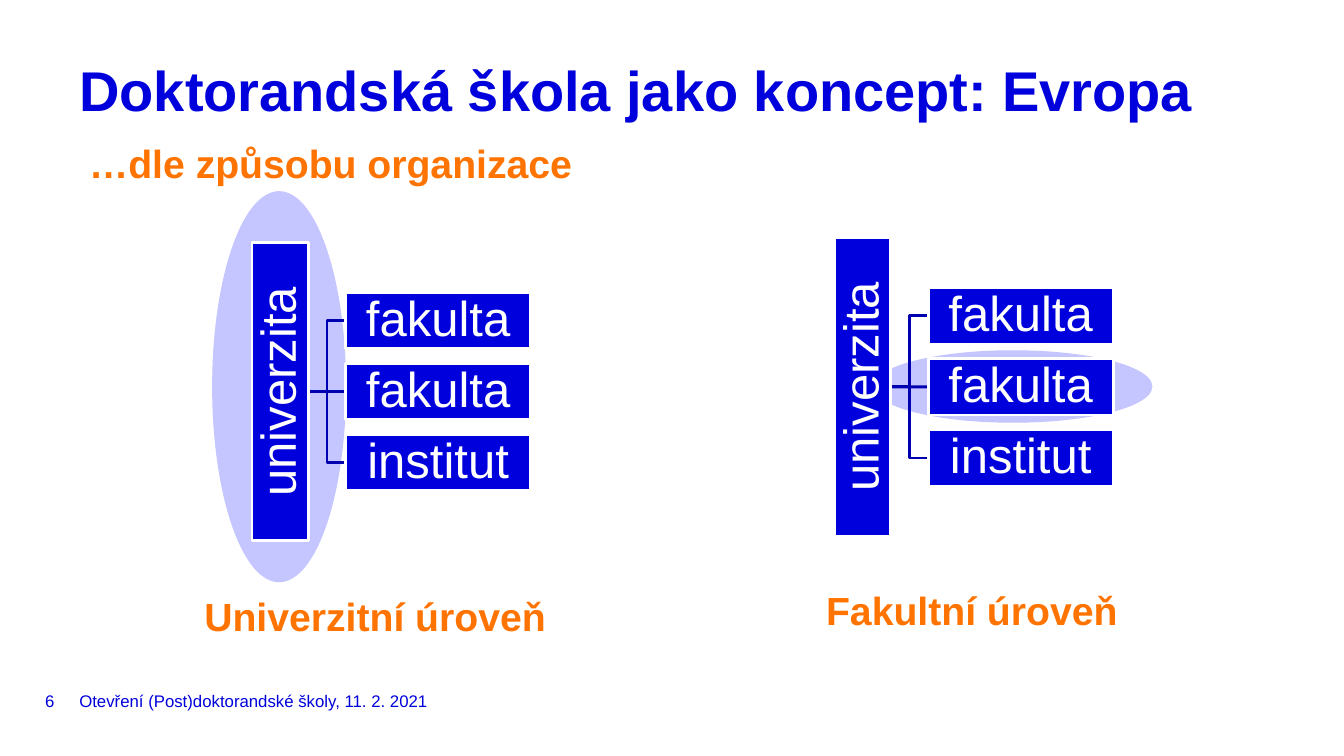
from lxml.etree import SubElement
from pptx import Presentation
from pptx.dml.color import RGBColor
from pptx.enum.shapes import MSO_CONNECTOR as Link, MSO_SHAPE as Shape
from pptx.enum.text import MSO_ANCHOR as Anchor, MSO_AUTO_SIZE as AutoSize, PP_ALIGN as Align
from pptx.oxml.ns import qn
from pptx.util import Cm, Pt

BLUE, DARK_BLUE, LILAC = "0000DC", "0000B0", "C5C5FF"
ORANGE, WHITE = "FF7300", "FFFFFF"
BOX_HEIGHT, UNIT_WIDTH, TRUNK_HEIGHT = 1.42, 4.67, 7.52
GAP, ROW_STEP = 0.94, 1.79
TOP, LEFT, BOTTOM, RIGHT = range(4)


def color(value):
    return RGBColor.from_string(value)


def write(frame, text, size, ink=BLUE, bold=False, align=Align.LEFT,
          anchor=Anchor.TOP, margin=None, wrap=True, fit=AutoSize.NONE, spacing=None):
    frame.word_wrap = wrap
    frame.auto_size = fit
    frame.vertical_anchor = anchor
    if margin is not None:
        frame.margin_left = frame.margin_right = Cm(margin)
        frame.margin_top = frame.margin_bottom = Cm(margin)
    para = frame.paragraphs[0]
    para.alignment = align
    if spacing is not None:
        para.line_spacing = spacing
    span = para.add_run()
    span.text = text
    span.font.name = "Arial"
    span.font.size = Pt(size)
    span.font.bold = bold
    span.font.color.rgb = color(ink)


def add_text(page, area, text, size, **style):
    box = page.shapes.add_textbox(*map(Cm, area))
    write(box.text_frame, text, size, **style)


def add_caption(page, area, text):
    add_text(page, area, text, 28, ink=ORANGE, bold=True,
             wrap=False, fit=AutoSize.SHAPE_TO_FIT_TEXT)


def add_figure(page, kind, area, fill, line, width):
    figure = page.shapes.add_shape(kind, *map(Cm, area))
    figure.shadow.inherit = False
    figure.fill.solid()
    figure.fill.fore_color.rgb = color(fill)
    figure.line.color.rgb = color(line)
    figure.line.width = Pt(width)
    return figure


def add_highlight(page, area):
    add_figure(page, Shape.OVAL, area, LILAC, LILAC, 0.75)


def add_unit(page, area, text):
    box = add_figure(page, Shape.RECTANGLE, area, BLUE, WHITE, 2)
    write(box.text_frame, text, 35, ink=WHITE, align=Align.CENTER,
          anchor=Anchor.MIDDLE, margin=0.04, spacing=0.9)
    return box


def add_link(page, kind):
    link = page.shapes.add_connector(kind, 0, 0, 0, 0)
    link.line.color.rgb = color(DARK_BLUE)
    link.line.width = Pt(2)
    SubElement(link.element.spPr, qn("a:effectLst"))
    return link


def add_hierarchy(page, left, middle, trunk_text, unit_texts):
    """Upright trunk with units to its right, all centred on the height middle."""
    centre = (len(unit_texts) - 1) / 2
    # Links are made first so that they lie behind the boxes they join.
    links = [add_link(page, Link.STRAIGHT if row == centre else Link.ELBOW)
             for row in range(len(unit_texts))]
    trunk = add_unit(page, (left, middle - TRUNK_HEIGHT / 2, BOX_HEIGHT, TRUNK_HEIGHT),
                     trunk_text)
    trunk.text_frame._txBody.bodyPr.set("vert", "vert270")
    for row, (link, text) in enumerate(zip(links, unit_texts)):
        top = middle + (row - centre) * ROW_STEP - BOX_HEIGHT / 2
        unit = add_unit(page, (left + BOX_HEIGHT + GAP, top, UNIT_WIDTH, BOX_HEIGHT), text)
        link.begin_connect(trunk, RIGHT)
        link.end_connect(unit, LEFT)


def add_title(page, text):
    title = page.shapes.title
    title.left, title.top, title.width, title.height = map(Cm, (2, 1.68, 29.87, 1.24))
    write(title.text_frame, text, 40, bold=True, margin=0, spacing=Pt(40))


def main():
    deck = Presentation()
    deck.slide_width, deck.slide_height = Cm(33.87), Cm(19.05)
    page = deck.slides.add_slide(deck.slide_layouts.get_by_name("Title Only"))

    add_highlight(page, (22.02, 8.84, 7.01, 1.8))
    add_highlight(page, (5.36, 4.83, 3.35, 9.83))

    footer = {"anchor": Anchor.MIDDLE, "margin": 0}
    add_text(page, (2, 17.3, 22, 0.71),
             "Otevření (Post)doktorandské školy, 11. 2. 2021", 12, **footer)
    add_text(page, (1.14, 17.3, 0.71, 0.71), "6", 12, wrap=False, **footer)
    add_title(page, "Doktorandská škola jako koncept: Evropa")

    units = ("fakulta", "fakulta", "institut")
    add_hierarchy(page, 21.03, 9.75, "univerzita", units)
    add_hierarchy(page, 6.35, 9.87, "univerzita", units)

    add_caption(page, (4.9, 14.81, 9.22, 1.45), "Univerzitní úroveň")
    add_caption(page, (20.57, 14.66, 7.95, 1.45), "Fakultní úroveň")
    add_caption(page, (2, 3.38, 12.83, 1.45), "…dle způsobu organizace")
    deck.save("out.pptx")


if __name__ == "__main__":
    main()
